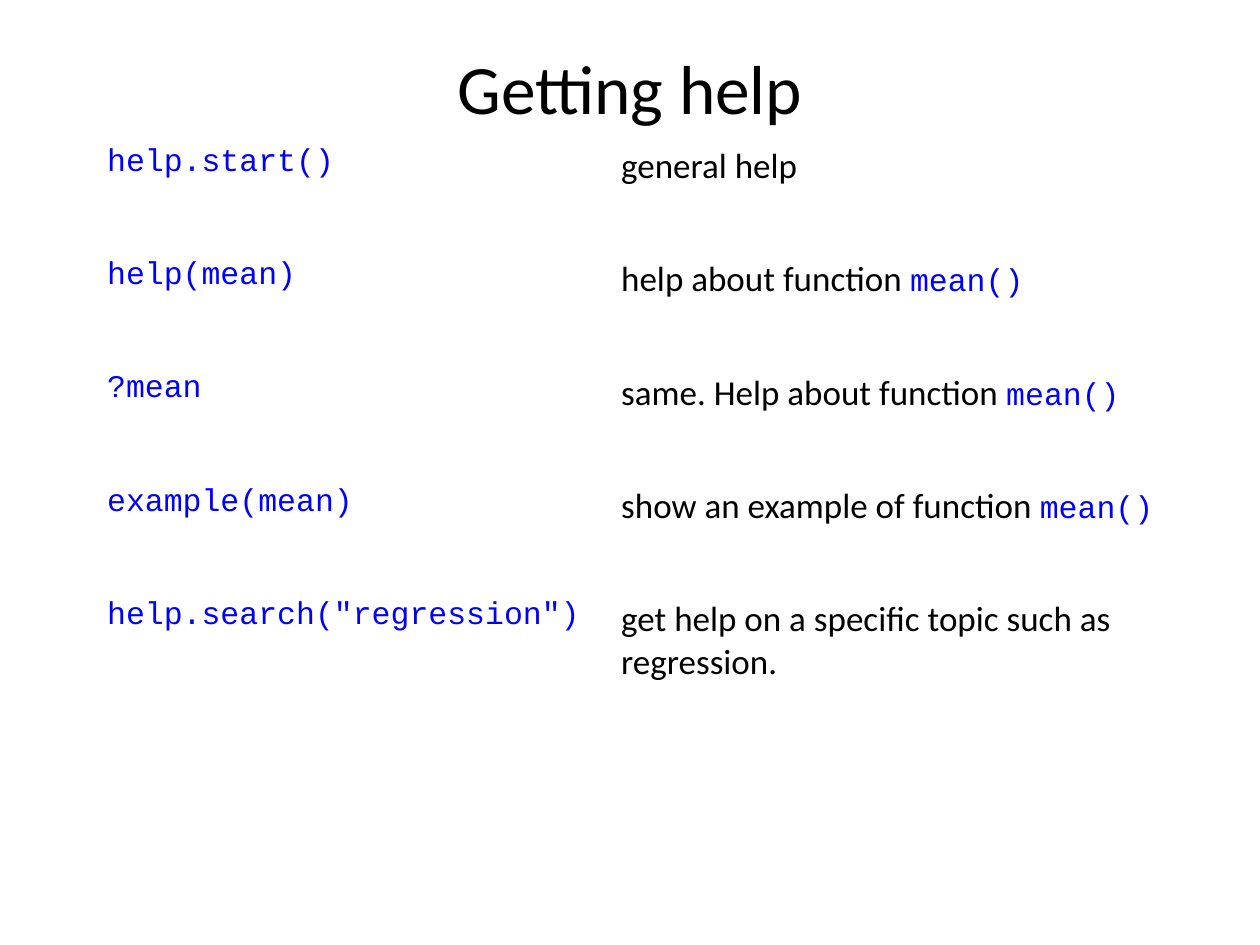
from pptx import Presentation, util as u
from pptx.dml.color import RGBColor
from pptx.enum import text

# Colours and type sizes
THEME = {
    "title": {"name": "Calibri", "size": u.Pt(39.6), "color": "000000"},
    "body": {"name": "Calibri", "size": u.Pt(20), "color": "000000"},
    "code": {"name": "Courier New", "size": u.Pt(18), "color": "0000FF"},
}

MEAN = ("mean()", "code")
ROWS = [
    ("help.start()", [("general help", "body")]),
    ("help(mean)", [("help about function ", "body"), MEAN]),
    ("?mean", [("same. Help about function ", "body"), MEAN]),
    ("example(mean)", [("show an example of function ", "body"), MEAN]),
    ('help.search("regression")',
     [("get help on a specific topic such as regression.", "body")]),
]


class Deck:
    def __init__(self, theme, wide, high):
        self.theme = theme
        self.prs = Presentation()
        self.prs.slide_width = u.Inches(wide)
        self.prs.slide_height = u.Inches(high)
        self.slide = self.prs.slides.add_slide(self.prs.slide_layouts[6])

    def fill_par(self, par, runs):
        for words, style in runs:
            run = par.add_run()
            run.text = words
            for key, val in self.theme[style].items():
                if key == "color":
                    run.font.color.rgb = RGBColor.from_string(val)
                else:
                    setattr(run.font, key, val)

    def title(self, words, box):
        frame = self.slide.shapes.add_textbox(*map(u.Inches, box)).text_frame
        frame.word_wrap = True
        frame.vertical_anchor = text.MSO_ANCHOR.MIDDLE
        par = frame.paragraphs[0]
        par.alignment = text.PP_ALIGN.CENTER
        self.fill_par(par, [(words, "title")])

    def table(self, rows, left, top, cols, high):
        size = map(u.Inches, (left, top, sum(cols), high * len(rows)))
        grid = self.slide.shapes.add_table(len(rows), len(cols), *size).table
        for flag in ("first_row", "horz_banding"):
            setattr(grid, flag, False)
        for col, wide in zip(grid.columns, cols):
            col.width = u.Inches(wide)
        for r, row in enumerate(rows):
            for c, runs in enumerate(row):
                cell = grid.cell(r, c)
                cell.fill.background()
                self.fill_par(cell.text_frame.paragraphs[0], runs)


def main():
    deck = Deck(THEME, 10, 7.5)

    # Heading
    deck.title("Getting help", (0.5, 0.3, 9, 0.78))

    # Commands and what they do
    rows = [([(call, "code")], note) for call, note in ROWS]
    deck.table(rows, 0.75, 1.1, (4.08, 4.88), 0.9)

    deck.prs.save("out.pptx")


if __name__ == "__main__":
    main()
